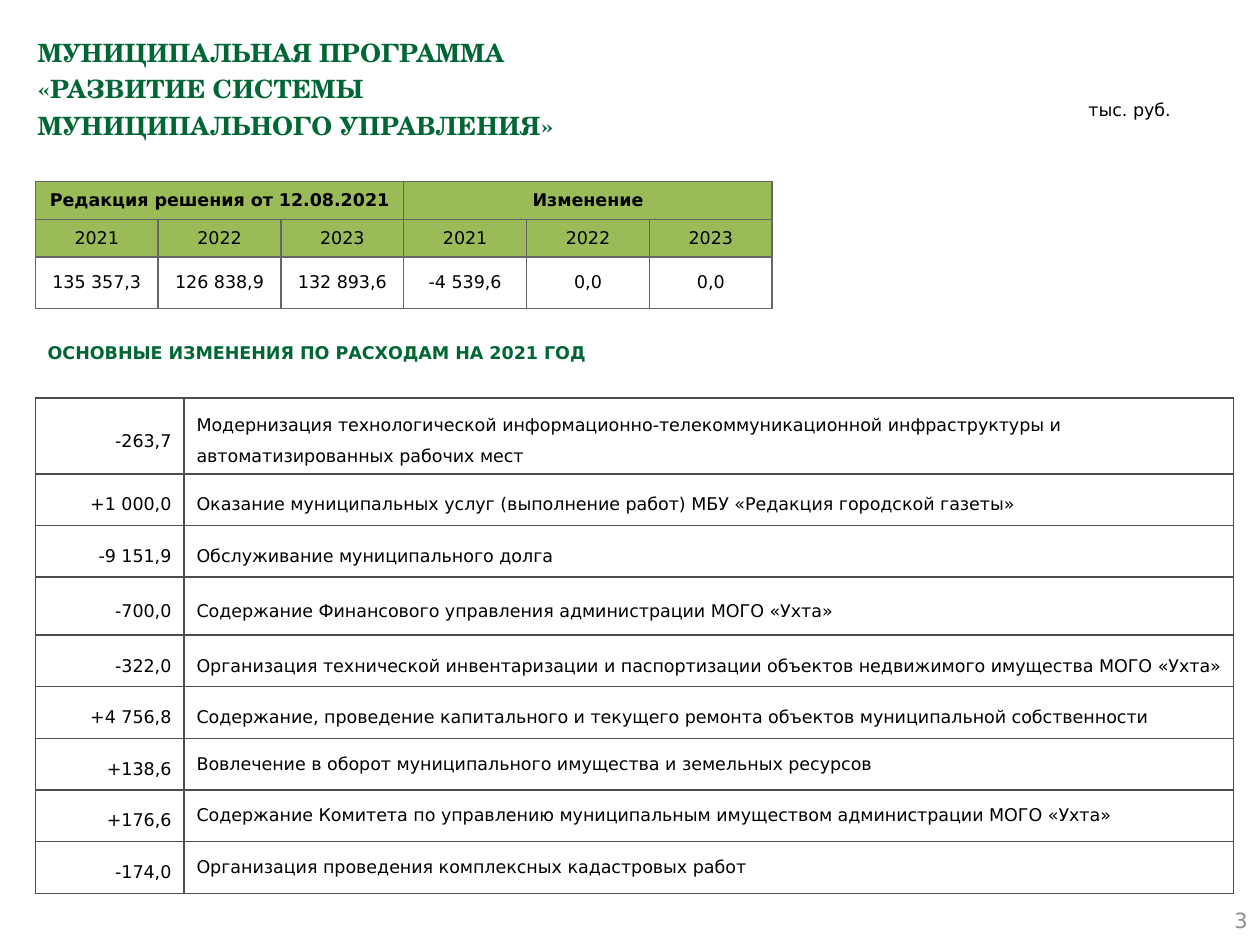
from lxml.etree import SubElement
from pptx import Presentation
from pptx.dml.color import RGBColor
from pptx.enum.shapes import MSO_SHAPE as Shape
from pptx.enum.text import MSO_ANCHOR as Anchor, PP_ALIGN as Align
from pptx.oxml.ns import qn
from pptx.util import Inches, Pt

# Grid of 100 columns by 75 rows on a 10 x 7.5 inch slide
COLUMNS, ROWS = 100, 75
UNIT = Inches(10) / COLUMNS

SANS, SERIF = "DejaVu Sans", "TeX Gyre Schola"
GREEN = RGBColor(0x00, 0x66, 0x33)
BLACK = RGBColor(0x00, 0x00, 0x00)
GRAY = RGBColor(0x8C, 0x8C, 0x8C)
HEADER_FILL = RGBColor(0x9B, 0xBB, 0x59)
BUDGET_BORDER = RGBColor(0x66, 0x66, 0x66)
CHANGES_BORDER = RGBColor(0x4D, 0x4D, 0x4D)

TITLE = ["МУНИЦИПАЛЬНАЯ ПРОГРАММА", "«РАЗВИТИЕ СИСТЕМЫ", "МУНИЦИПАЛЬНОГО УПРАВЛЕНИЯ»"]
GROUPS = ["Редакция решения от 12.08.2021", "Изменение"]
YEARS = ["2021", "2022", "2023"]
BUDGET = ["135 357,3", "126 838,9", "132 893,6", "-4 539,6", "0,0", "0,0"]

# Amount, purpose, line spacing of the purpose
CHANGES = [
    ("-263,7", "Модернизация технологической информационно-телекоммуникационной "
               "инфраструктуры и автоматизированных рабочих мест", 1.5),
    ("+1 000,0", "Оказание муниципальных услуг (выполнение работ) "
                 "МБУ «Редакция городской газеты»", 1.5),
    ("-9 151,9", "Обслуживание муниципального долга", 1.5),
    ("-700,0", "Содержание Финансового управления администрации МОГО «Ухта»", 1.5),
    ("-322,0", "Организация технической инвентаризации и паспортизации "
               "объектов недвижимого имущества МОГО «Ухта»", 1.5),
    ("+4 756,8", "Содержание, проведение капитального и текущего ремонта "
                 "объектов муниципальной собственности", 1.5),
    ("+138,6", "Вовлечение в оборот муниципального имущества и земельных ресурсов", 1.0),
    ("+176,6", "Содержание Комитета по управлению муниципальным имуществом "
               "администрации МОГО «Ухта»", 1.0),
    ("-174,0", "Организация проведения комплексных кадастровых работ", 1.0),
]


def grid(*cells):
    return [round(cell * UNIT) for cell in cells]


def write(frame, lines, size=10, color=BLACK, font=SANS, bold=False,
          align=Align.LEFT, spacing=1.0, after=0):
    para = frame.paragraphs[0]
    para.alignment = align
    para.line_spacing = spacing
    para.space_after = Pt(after)
    for index, line in enumerate(lines):
        if index:
            para.add_line_break()
        span = para.add_run()
        span.text = line
        span.font.size = Pt(size)
        span.font.name = font
        span.font.bold = bold
        span.font.color.rgb = color


def add_label(page, place, lines, anchor=Anchor.TOP, **style):
    box = page.shapes.add_textbox(*grid(*place))
    box.text_frame.word_wrap = True
    box.text_frame.vertical_anchor = anchor
    write(box.text_frame, lines, **style)


def add_heading(page, place, text):
    plate = page.shapes.add_shape(Shape.PENTAGON, *grid(*place))
    plate.adjustments[0] = 0
    plate.shadow.inherit = False
    plate.fill.background()
    plate.line.fill.background()
    plate.text_frame.vertical_anchor = Anchor.MIDDLE
    plate.text_frame.word_wrap = True
    write(plate.text_frame, [text], color=GREEN, bold=True)


def add_borders(cell, color):
    properties = cell._tc.get_or_add_tcPr()
    for side in ("a:lnL", "a:lnR", "a:lnT", "a:lnB"):
        line = SubElement(properties, qn(side), w=str(Pt(1)))
        fill = SubElement(line, qn("a:solidFill"))
        SubElement(fill, qn("a:srgbClr"), val=str(color))


def add_grid_table(page, left, top, widths, heights, border):
    place = grid(left, top, sum(widths), sum(heights))
    table = page.shapes.add_table(len(heights), len(widths), *place).table
    table.first_row = table.horz_banding = False
    for column, width in zip(table.columns, grid(*widths)):
        column.width = width
    for row, height in zip(table.rows, grid(*heights)):
        row.height = height
    for cell in table.iter_cells():
        add_borders(cell, border)
        cell.fill.background()
        cell.vertical_anchor = Anchor.MIDDLE
    return table


def add_budget_table(page):
    table = add_grid_table(page, 2.8, 14.4, [9.75] * 6, [3, 3, 4.1], BUDGET_BORDER)
    for cell in table.iter_cells():
        cell.margin_left = cell.margin_right = Inches(0.05)
    # Each group heading spans its three years
    for index, group in enumerate(GROUPS):
        first = index * len(YEARS)
        heading = table.cell(0, first)
        heading.merge(table.cell(0, first + len(YEARS) - 1))
        write(heading.text_frame, [group], bold=True, align=Align.CENTER)
    for column, (year, amount) in enumerate(zip(YEARS * 2, BUDGET)):
        for row, text in ((1, year), (2, amount)):
            write(table.cell(row, column).text_frame, [text], align=Align.CENTER)
        for row in (0, 1):
            fill = table.cell(row, column).fill
            fill.solid()
            fill.fore_color.rgb = HEADER_FILL


def add_changes_table(page):
    heights = [4.1] * 3 + [4.6] + [4.1] * 5
    table = add_grid_table(page, 2.8, 31.6, [11.8, 83.3], heights, CHANGES_BORDER)
    for row, (amount, purpose, spacing) in enumerate(CHANGES):
        write(table.cell(row, 0).text_frame, [amount], align=Align.RIGHT,
              spacing=1.5, after=10)
        write(table.cell(row, 1).text_frame, [purpose], spacing=spacing)


def main():
    deck = Presentation()
    deck.slide_width, deck.slide_height = grid(COLUMNS, ROWS)
    page = deck.slides.add_slide(deck.slide_layouts[6])

    # Title, page number and unit of measure
    add_label(page, (2, 2, 96.1, 7.9), TITLE, size=14.4, color=GREEN,
              font=SERIF, bold=True, spacing=1.2)
    add_label(page, (76.7, 71, 23.3, 4), ["3"], anchor=Anchor.MIDDLE,
              size=12, color=GRAY, align=Align.RIGHT)
    add_label(page, (85.4, 7, 10.1, 3), ["тыс. руб."], spacing=1.2)

    # Budget by year, then the changes behind it
    add_budget_table(page)
    add_heading(page, (2.8, 25.8, 53.2, 4.3), "ОСНОВНЫЕ ИЗМЕНЕНИЯ ПО РАСХОДАМ НА 2021 ГОД")
    add_changes_table(page)

    deck.save("out.pptx")


if __name__ == "__main__":
    main()
